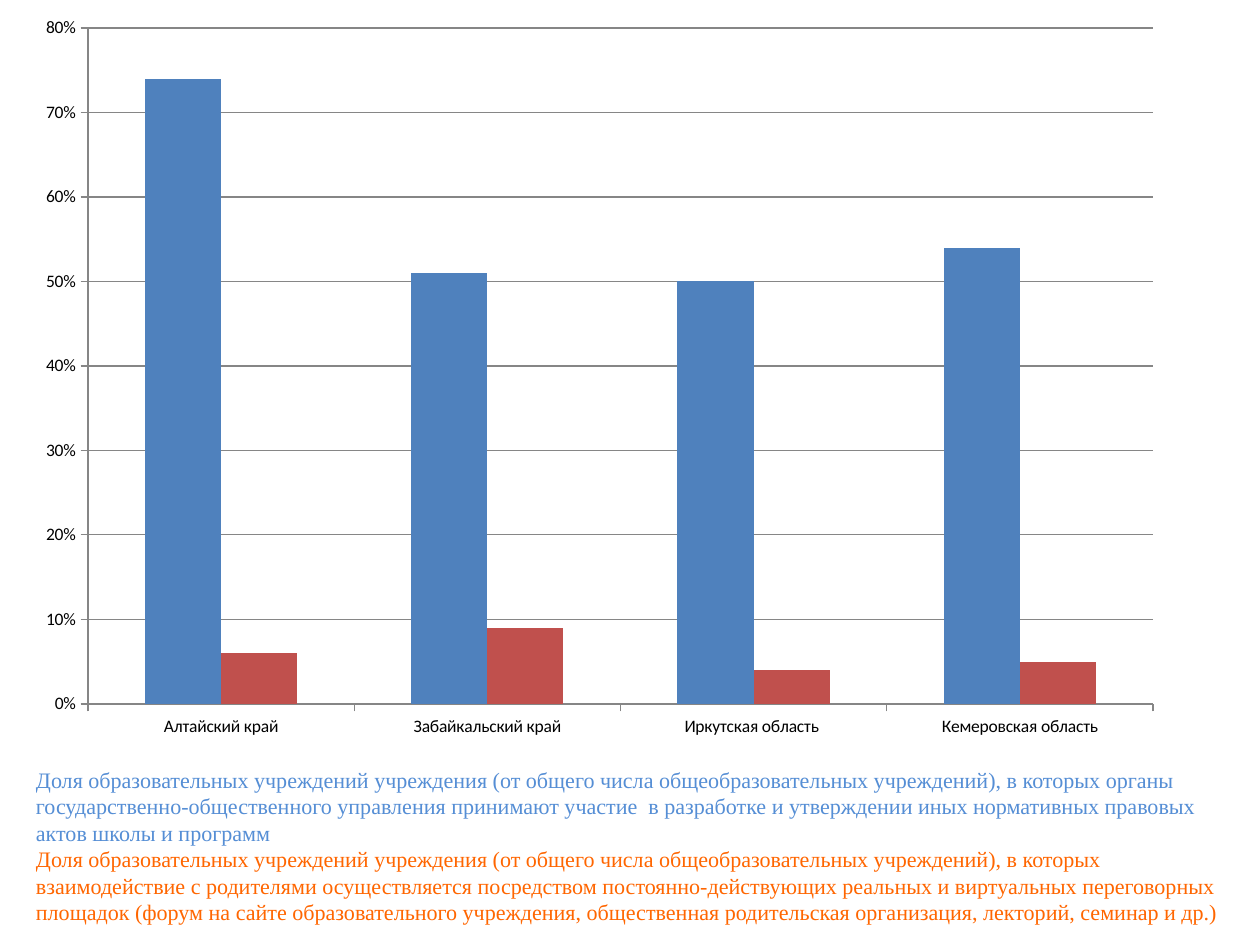
from lxml import etree
from pptx import Presentation
from pptx import util as u
from pptx.chart.data import CategoryChartData
from pptx.dml.color import RGBColor
from pptx.enum import chart as charts, text
from pptx.oxml import parse_xml
from pptx.oxml.ns import nsdecls, qn

EMU_PER_PX = 914400 // 126
AXIS_GREY = "868686"
CHART_BOX = (24, 4, 1153, 748)
PLOT_BOX = (88, 28, 1065, 676)

REGIONS = ["Алтайский край", "Забайкальский край", "Иркутская область ", "Кемеровская область"]
SERIES = [
    ("Series 1", "4F81BD", [0.74, 0.51, 0.50, 0.54]),
    ("Series 2", "C0504D", [0.06, 0.09, 0.04, 0.05]),
]
CAPTIONS = [
    ("Доля образовательных учреждений учреждения (от общего числа общеобразовательных "
     "учреждений), в которых органы государственно-общественного управления принимают "
     "участие  в разработке и утверждении иных нормативных правовых актов школы и программ",
     "558ED5"),
    ("Доля образовательных учреждений учреждения (от общего числа общеобразовательных "
     "учреждений), в которых взаимодействие с родителями осуществляется посредством "
     "постоянно-действующих реальных и виртуальных переговорных площадок (форум на сайте "
     "образовательного учреждения, общественная родительская организация, лекторий, "
     "семинар и др.)",
     "FF6600"),
]


def px(*lengths):
    return [u.Emu(length * EMU_PER_PX) for length in lengths]


def color(hex_string):
    return RGBColor.from_string(hex_string)


def style_line(line):
    line.color.rgb = color(AXIS_GREY)
    line.width = u.Pt(0.75)


def set_plot_layout(chart):
    """Fix the inner plot area as fractions of the chart frame."""
    plot_area = chart.plots[0]._element.getparent()
    for old in plot_area.findall(qn("c:layout")):
        plot_area.remove(old)
    layout = parse_xml(f"<c:layout {nsdecls('c')}><c:manualLayout/></c:layout>")
    chart_left, chart_top, chart_width, chart_height = CHART_BOX
    left, top, width, height = PLOT_BOX
    settings = {
        "layoutTarget": "inner", "xMode": "edge", "yMode": "edge",
        "x": (left - chart_left) / chart_width,
        "y": (top - chart_top) / chart_height,
        "w": width / chart_width,
        "h": height / chart_height,
    }
    for name, value in settings.items():
        etree.SubElement(layout[0], qn(f"c:{name}")).set("val", str(value))
    plot_area.insert(0, layout)


def add_region_chart(slide):
    data = CategoryChartData(number_format="0%")
    data.categories = REGIONS
    for name, _, values in SERIES:
        data.add_series(name, values)
    chart = slide.shapes.add_chart(
        charts.XL_CHART_TYPE.COLUMN_CLUSTERED, *px(*CHART_BOX), data).chart
    chart.has_legend = False
    chart.has_title = False
    chart.font.name = "Calibri"
    chart.font.size = u.Pt(10)
    chart.font.color.rgb = color("000000")

    plot = chart.plots[0]
    plot.gap_width = 150
    plot.overlap = 0
    plot.vary_by_categories = False
    for series, (_, fill, _) in zip(plot.series, SERIES):
        series.format.fill.solid()
        series.format.fill.fore_color.rgb = color(fill)

    for axis in (chart.category_axis, chart.value_axis):
        axis.major_tick_mark = charts.XL_TICK_MARK.OUTSIDE
        axis.minor_tick_mark = charts.XL_TICK_MARK.NONE
        style_line(axis.format.line)
    value_axis = chart.value_axis
    value_axis.minimum_scale, value_axis.maximum_scale = 0, 0.8
    value_axis.major_unit = 0.1
    value_axis.tick_labels.number_format = "0%"
    value_axis.tick_labels.number_format_is_linked = False
    value_axis.has_major_gridlines = True
    style_line(value_axis.major_gridlines.format.line)
    set_plot_layout(chart)


def add_captions(slide):
    """Describe each series in its own colour, below the chart."""
    frame = slide.shapes.add_textbox(*px(24, 766, 1210, 170)).text_frame
    frame.word_wrap = True
    frame.vertical_anchor = text.MSO_ANCHOR.TOP
    frame.margin_left, frame.margin_right = px(12, 6)
    frame.margin_top = frame.margin_bottom = 0
    paragraph = frame.paragraphs[0]
    paragraph.alignment = text.PP_ALIGN.LEFT
    for index, (caption, font_color) in enumerate(CAPTIONS):
        if index:
            paragraph.add_line_break()
        run = paragraph.add_run()
        run.text = caption
        run.font.name = "Times New Roman"
        run.font.size = u.Pt(12.6)
        run.font.color.rgb = color(font_color)


def main():
    presentation = Presentation()
    presentation.slide_width, presentation.slide_height = u.Inches(10), u.Inches(7.5)
    slide = presentation.slides.add_slide(presentation.slide_layouts[6])
    add_captions(slide)
    add_region_chart(slide)
    presentation.save("out.pptx")


if __name__ == "__main__":
    main()
